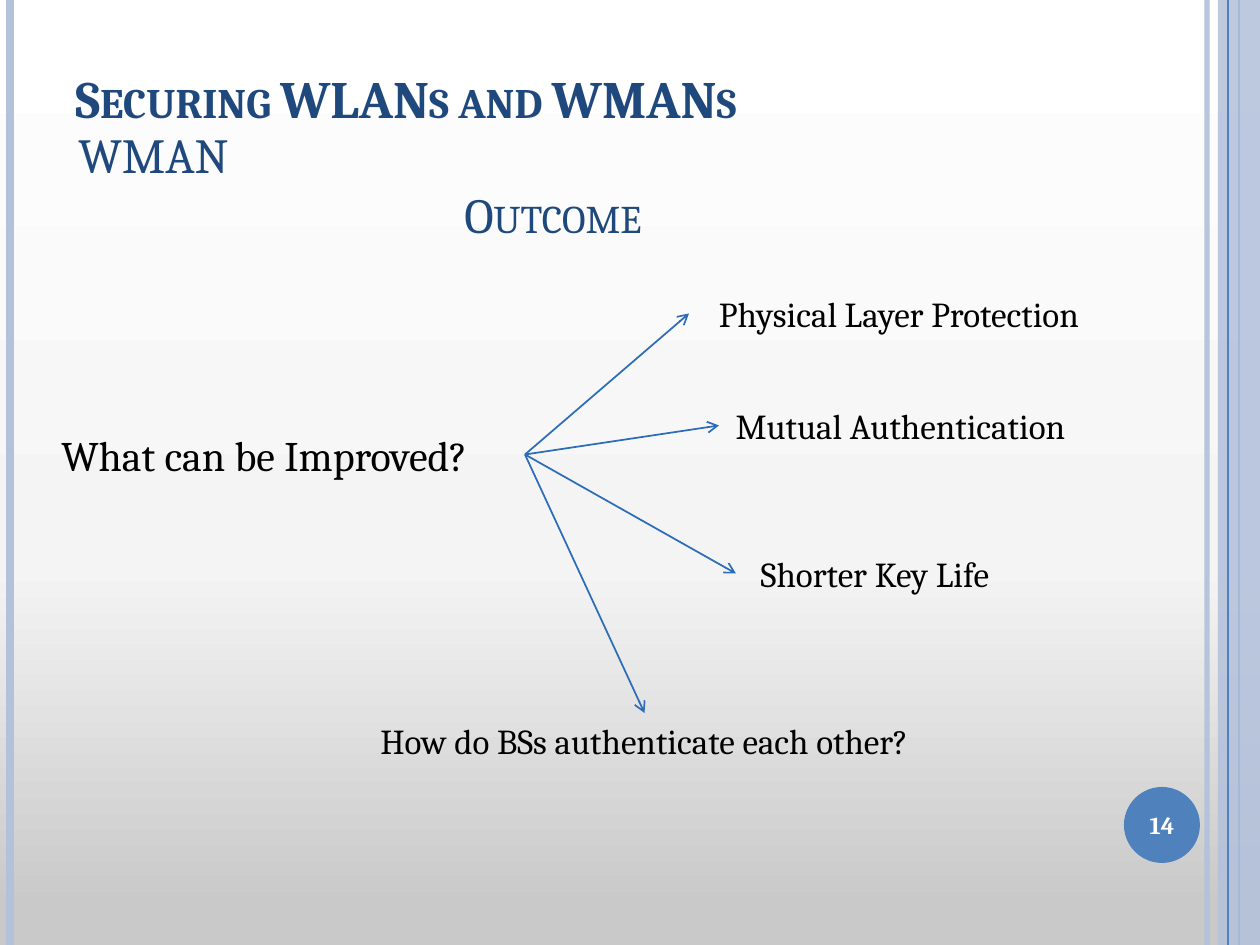
from copy import deepcopy
from dataclasses import dataclass

from lxml import etree
from pptx import Presentation
from pptx import util as u
from pptx.dml import color
from pptx.enum import shapes, text
from pptx.oxml import ns

PX = u.Inches(1) / 126
TOP, LEFT, RIGHT = 0, 1, 3


@dataclass(frozen=True)
class Theme:
    font: str = "Cambria"
    navy: str = "1F497D"
    blue: str = "4F81BD"
    pale: str = "B3C1DB"
    arrow: str = "2C6CB9"
    ink: str = "000000"
    white: str = "FFFFFF"
    backdrop: tuple = ((4, "C9C9C9"), (40, "F4F4F4"), (100, "FFFFFF"))
    title: int = 30
    heading: int = 28
    question: int = 24
    answer: int = 20
    number: int = 14


THEME = Theme()


def px(*lengths):
    return [u.Emu(round(length * PX)) for length in lengths]


def rgb(value):
    return color.RGBColor.from_string(value)


def sub(parent, tag, **attributes):
    return etree.SubElement(parent, ns.qn(tag), attributes)


def set_opacity(shape, percent):
    for solid in shape._element.spPr.iter(ns.qn("a:srgbClr")):
        sub(solid, "a:alpha", val=str(percent * 1000))


def add_text(slide, box, content, size, ink=THEME.ink, bold=False, small_caps=False,
             align=text.PP_ALIGN.LEFT, anchor=text.MSO_ANCHOR.TOP, wrap=False):
    label = slide.shapes.add_textbox(*px(*box))
    frame = label.text_frame
    frame.word_wrap = wrap
    frame.vertical_anchor = anchor
    paragraph = frame.paragraphs[0]
    paragraph.alignment = align
    run = paragraph.add_run()
    run.text = content
    run.font.name = THEME.font
    run.font.size = u.Pt(size)
    run.font.bold = bold
    run.font.color.rgb = rgb(ink)
    if small_caps:
        run._r.get_or_add_rPr().set("cap", "small")
    return label


def add_line(slide, start, end, ink, width):
    line = slide.shapes.add_connector(shapes.MSO_CONNECTOR.STRAIGHT, *px(*start, *end))
    line.line.color.rgb = rgb(ink)
    line.line.width = u.Pt(width)
    sub(line._element.spPr, "a:effectLst")
    return line


def add_filled(slide, kind, box, fill):
    shape = slide.shapes.add_shape(kind, *px(*box))
    shape.shadow.inherit = False
    shape.fill.solid()
    shape.fill.fore_color.rgb = rgb(fill)
    shape.line.fill.background()
    return shape


def paint_background(slide):
    fill = slide.background.fill
    fill.gradient()
    fill.gradient_angle = 90
    stop_list = fill.gradient_stops[0]._gs.getparent()
    stop_list.append(deepcopy(stop_list[-1]))
    for stop, (position, shade) in zip(fill.gradient_stops, THEME.backdrop):
        stop.position = position / 100
        stop.color.rgb = rgb(shade)


def draw_rails(slide, box):
    left, top, width, height = box

    def rail(x, ink, weight):
        return add_line(slide, (left + x, top), (left + x, top + height), ink, weight)

    set_opacity(rail(1207, THEME.pale, 3), 93)
    rail(10, THEME.pale, 4.5)
    rail(1239, THEME.blue, 1.5)
    band = add_filled(slide, shapes.MSO_SHAPE.RECTANGLE,
                      (left + 1218, top, width - 1218, height), THEME.pale)
    set_opacity(band, 87)
    rail(1228, THEME.blue, 0.75)


def draw_page_number(slide, box, number):
    left, top, width, height = box
    add_filled(slide, shapes.MSO_SHAPE.OVAL, box, THEME.blue)
    add_text(slide, (left - 4, top + 2, width + 8, height - 4), number, THEME.number,
             ink=THEME.white, bold=True, align=text.PP_ALIGN.CENTER,
             anchor=text.MSO_ANCHOR.MIDDLE)


def draw_headings(slide, box):
    left, top, width, height = box
    style = dict(ink=THEME.navy, small_caps=True)
    add_text(slide, (left + 389, top + 134, 236, 72), "Outcome", THEME.heading, **style)
    add_text(slide, (left, top, width, 91), "Securing WLANs and WMANs", THEME.title,
             bold=True, anchor=text.MSO_ANCHOR.BOTTOM, wrap=True, **style)
    add_text(slide, (left + 3, top + 74, 181, 72), "WMAN", THEME.heading, **style)


def draw_improvements(slide, box):
    left, top, width, height = box
    question = add_text(slide, (left, top + 137, 476, 63), "What can be Improved?",
                        THEME.question)
    answers = (
        ("Mutual Authentication", 670, 112, 363, LEFT),
        ("Physical Layer Protection", 640, 0, 420, LEFT),
        ("Shorter Key Life", 687, 260, 278, LEFT),
        ("How do BSs authenticate each other?", 286, 427, 619, TOP),
    )
    for content, x, y, answer_width, side in answers:
        answer = add_text(slide, (left + x, top + y, answer_width, 55), content,
                          THEME.answer, align=text.PP_ALIGN.CENTER)
        arrow = add_line(slide, (left, top), (left + x, top + y), THEME.arrow, 1)
        arrow.begin_connect(question, RIGHT)
        arrow.end_connect(answer, side)
        sub(arrow.line._get_or_add_ln(), "a:tailEnd", type="arrow")


def main():
    deck = Presentation()
    deck.slide_width, deck.slide_height = px(1260, 945)
    slide = deck.slides.add_slide(deck.slide_layouts[6])
    paint_background(slide)
    draw_rails(slide, (0, 0, 1260, 945))
    draw_page_number(slide, (1124, 787, 76, 76), "14")
    draw_headings(slide, (63, 44, 1029, 206))
    draw_improvements(slide, (49, 286, 1060, 482))
    deck.save("out.pptx")


if __name__ == "__main__":
    main()
